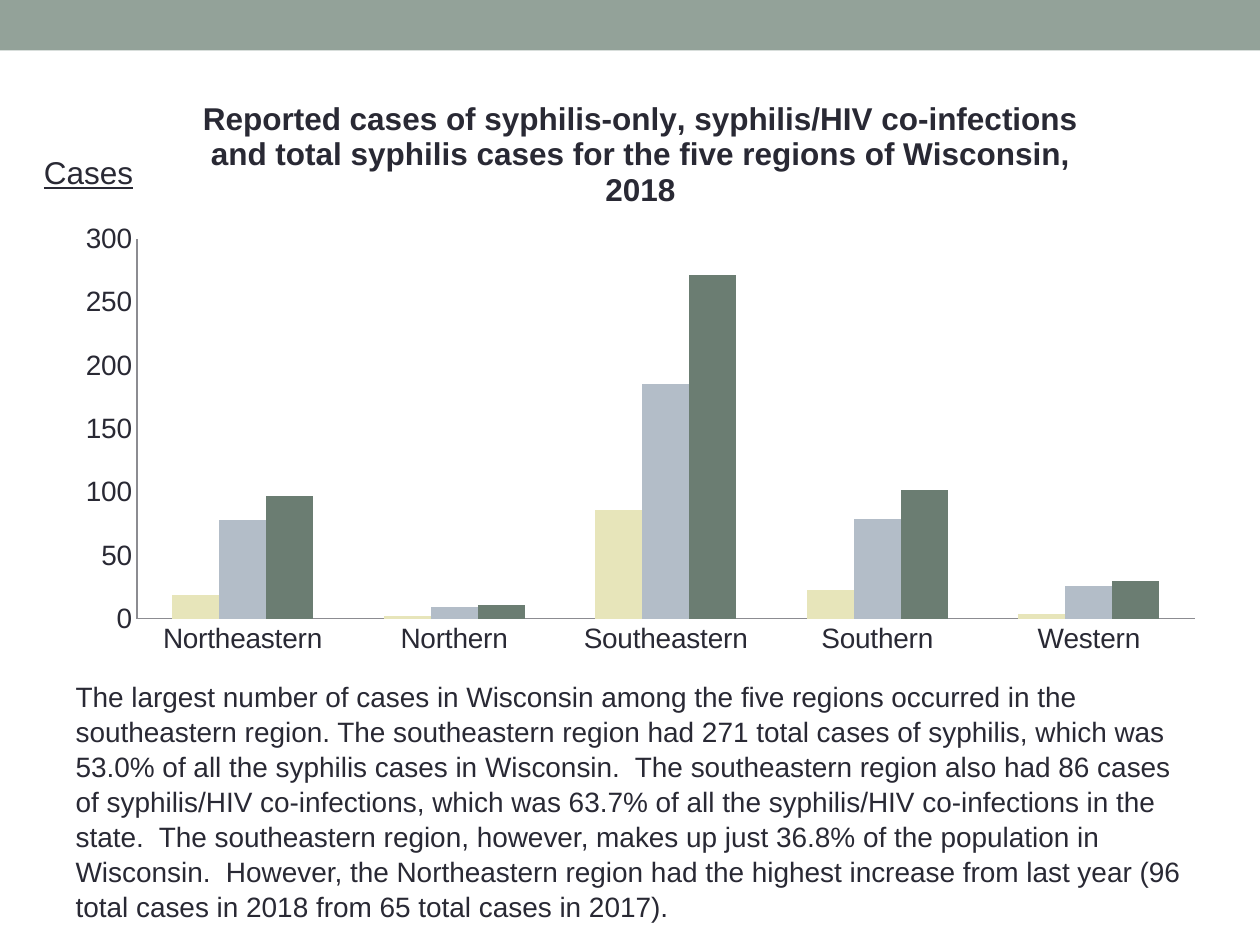
import pptx
import pptx.chart.data
import pptx.dml.color
import pptx.enum.chart
import pptx.enum.shapes
import pptx.enum.text
import pptx.oxml
import pptx.util
from pptx.util import Pt

FONT = "Arial"
COLORS = {
    "band": "93A299", "text": "292934", "axis": "8C8C91",
    "coinfection": "E7E5BA", "syphilis_only": "B3BDC8", "total": "6B7D72",
}


def rgb(name):
    return pptx.dml.color.RGBColor.from_string(COLORS[name])


def style(font, size, bold=False):
    font.name, font.size, font.bold = FONT, Pt(size), bold
    font.color.rgb = rgb("text")


deck = pptx.Presentation()
deck.slide_width, deck.slide_height = Pt(720), Pt(540)
slide = deck.slides.add_slide(deck.slide_layouts[1])

# The heading belongs to the chart, so the slide title is not needed
empty_title = slide.shapes.title.element
empty_title.getparent().remove(empty_title)

# Top band
band = slide.shapes.add_shape(
    pptx.enum.shapes.MSO_SHAPE.RECTANGLE, Pt(0), Pt(0), Pt(720), Pt(28.8))
band.shadow.inherit = False
band.fill.solid()
band.fill.fore_color.rgb = rgb("band")
band.line.fill.background()

# Commentary
commentary = slide.placeholders[1]
commentary.left, commentary.top = Pt(36), Pt(384)
commentary.width, commentary.height = Pt(648), Pt(132)
commentary.text_frame.text = (
    "The largest number of cases in Wisconsin among the five regions occurred "
    "in the southeastern region. The southeastern region had 271 total cases of "
    "syphilis, which was 53.0% of all the syphilis cases in Wisconsin.  The "
    "southeastern region also had 86 cases of syphilis/HIV co-infections, which "
    "was 63.7% of all the syphilis/HIV co-infections in the state.  The "
    "southeastern region, however, makes up just 36.8% of the population in "
    "Wisconsin.  However, the Northeastern region had the highest increase from "
    "last year (96 total cases in 2018 from 65 total cases in 2017).")
commentary.text_frame.auto_size = pptx.enum.text.MSO_AUTO_SIZE.NONE
paragraph = commentary.text_frame.paragraphs[0]
paragraph.space_before = Pt(3)
paragraph.line_spacing = 1.04
style(paragraph.runs[0].font, 16)
bullet_format = paragraph._p.get_or_add_pPr()
bullet_format.set("marL", "0")
bullet_format.set("indent", "0")
bullet_format.append(pptx.oxml.parse_xml(
    '<a:buNone xmlns:a="http://schemas.openxmlformats.org/drawingml/2006/main"/>'))

# Cases by region
regions = pptx.chart.data.CategoryChartData()
regions.categories = ["Northeastern", "Northern", "Southeastern", "Southern", "Western"]
regions.add_series("Series 1", [19, 2, 86, 23, 4])
regions.add_series("Series 2", [78, 9, 185, 79, 26])
regions.add_series("Series 3", [97, 11, 271, 102, 30])
chart = slide.shapes.add_chart(
    pptx.enum.chart.XL_CHART_TYPE.COLUMN_CLUSTERED,
    Pt(36), Pt(42), Pt(660), Pt(338.4), regions).chart
style(chart.font, 10)
chart.has_legend = False

chart.has_title = True
heading = chart.chart_title.text_frame
heading.text = ("Reported cases of syphilis-only, syphilis/HIV co-infections and "
                "total syphilis cases for the five regions of Wisconsin, 2018")
style(heading.paragraphs[0].runs[0].font, 18, bold=True)
chart.chart_title.include_in_layout = False

plot = chart.plots[0]
plot.gap_width, plot.overlap = 150, 0
plot.vary_by_categories = False
for series, name in zip(plot.series, ("coinfection", "syphilis_only", "total")):
    series.format.fill.solid()
    series.format.fill.fore_color.rgb = rgb(name)

for axis in (chart.category_axis, chart.value_axis):
    axis.has_major_gridlines = False
    axis.major_tick_mark = pptx.enum.chart.XL_TICK_MARK.NONE
    axis.minor_tick_mark = pptx.enum.chart.XL_TICK_MARK.NONE
    axis.format.line.color.rgb = rgb("axis")
    axis.format.line.width = Pt(0.75)
    style(axis.tick_labels.font, 16)
chart.value_axis.minimum_scale, chart.value_axis.maximum_scale = 0, 300
chart.value_axis.major_unit = 50

# Fixed inner plot area
plot_area = chart._chartSpace.chart.plotArea
for old_layout in plot_area.xpath("c:layout"):
    plot_area.remove(old_layout)
plot_area.insert(0, pptx.oxml.parse_xml(
    '<c:layout xmlns:c="http://schemas.openxmlformats.org/drawingml/2006/chart">'
    '<c:manualLayout><c:layoutTarget val="inner"/>'
    '<c:xMode val="edge"/><c:yMode val="edge"/>'
    '<c:x val="0.064"/><c:y val="0.279"/><c:w val="0.916"/><c:h val="0.642"/>'
    '</c:manualLayout></c:layout>'))

# Value axis caption
caption = slide.shapes.add_textbox(Pt(18), Pt(84), Pt(72), Pt(29)).text_frame
caption.word_wrap = True
caption.text = "Cases"
caption_font = caption.paragraphs[0].runs[0].font
style(caption_font, 18)
caption_font.underline = True

deck.save("out.pptx")
